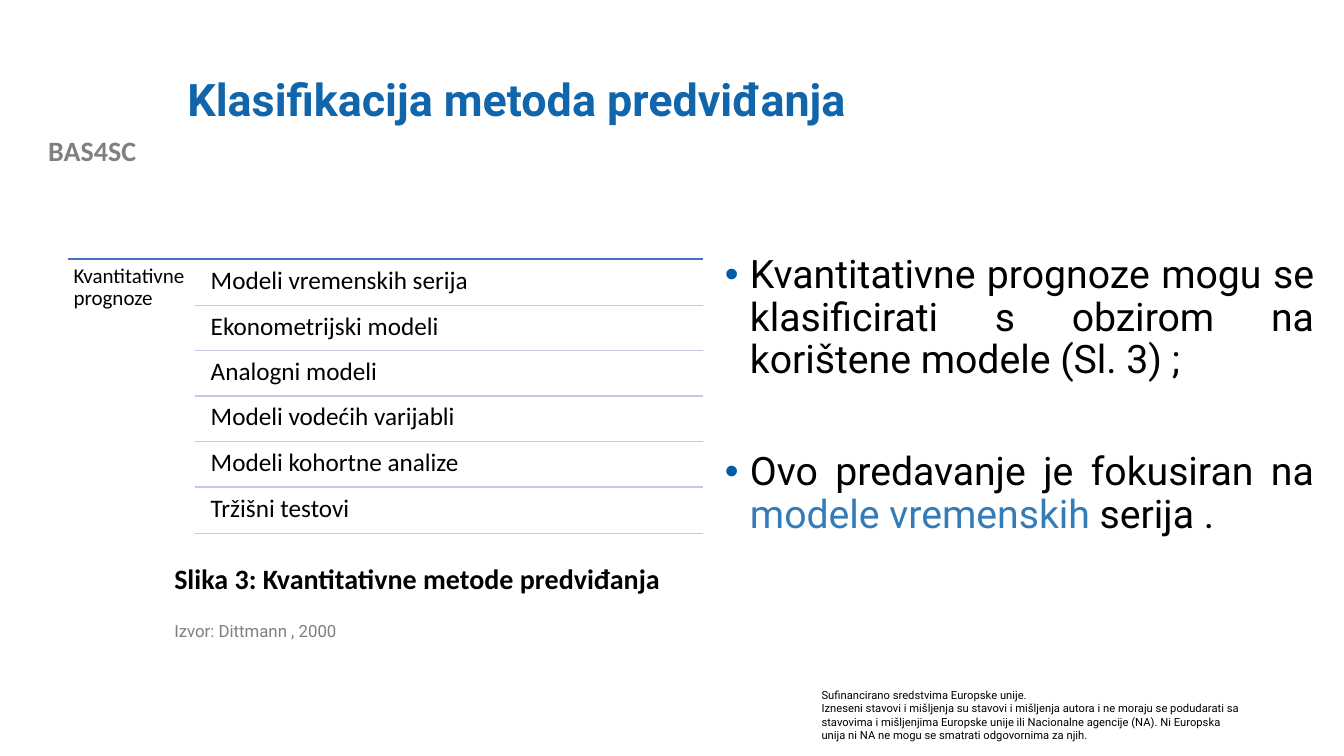
from pptx import Presentation, util as u
from pptx.dml.color import RGBColor
from pptx.enum import shapes, text
from pptx.oxml import parse_xml
from pptx.oxml.ns import nsdecls

HUE = {"title": "1065AB", "tag": "808080", "ink": "000000", "note": "7F7F7F",
       "dot": "015BA6", "key": "347CB8", "head": "4472C4", "rule": "C1C9E4"}
ROWS = ["Modeli vremenskih serija", "Ekonometrijski modeli", "Analogni modeli",
        "Modeli vodećih varijabli", "Modeli kohortne analize", "Tržišni testovi"]
POINTS = [[("Kvantitativne prognoze mogu se klasificirati s obzirom na korištene modele (Sl. 3) ;", "ink")],
          [("Ovo predavanje je fokusiran na ", "ink"), ("modele vremenskih ", "key"), ("serija .", "ink")]]
LEGAL = ["Sufinancirano sredstvima Europske unije.",
         "Izneseni stavovi i mišljenja su stavovi i mišljenja autora i ne moraju se podudarati sa "
         "stavovima i mišljenjima Europske unije ili Nacionalne agencije (NA). Ni Europska unija ni NA "
         "ne mogu se smatrati odgovornima za njih."]


def px(n):
    """Turn px into EMU, at 100 px to the inch."""
    return u.Emu(n * 9144)


def put(obj, **vals):
    """Set attributes from format values."""
    for name, val in vals.items():
        setattr(obj, name, val)


def write(para, words, size, hue="ink", face="Roboto", bold=False):
    """Add one run of styled text."""
    run = para.add_run()
    run.text = words
    put(run.font, size=u.Pt(size), name=face, bold=bold)
    run.font.color.rgb = RGBColor.from_string(HUE[hue])


def frame(slide, box, inset=None):
    """Place an empty wrapping text box and return its frame."""
    area = slide.shapes.add_textbox(*map(px, box)).text_frame
    area.word_wrap = True
    if inset is not None:
        sides = ("left", "top", "right", "bottom")
        put(area, **{f"margin_{side}": px(inset) for side in sides})
    return area


def label(slide, box, words, size, inset=None, form=None, **font):
    """Place a text box that holds one paragraph."""
    area = frame(slide, box, inset)
    para = area.paragraphs[0]
    write(para, words, size, **font)
    put(para, **(form or {}))
    return area


def rule(slide, left, right, top, hue):
    """Draw a level line."""
    line = slide.shapes.add_connector(shapes.MSO_CONNECTOR.STRAIGHT,
                                      px(left), px(top), px(right), px(top))
    line.line.width = u.Pt(1)
    line.line.color.rgb = RGBColor.from_string(HUE[hue])
    line._element.spPr.append(parse_xml(f"<a:effectLst {nsdecls('a')}/>"))


def header(slide, box):
    """Place the title and the project tag."""
    left, top, wide, high = box
    area = label(slide, (left + 176, top, wide - 176, high), "Klasifikacija metoda predviđanja",
                 32, form={"line_spacing": 0.9}, hue="title", bold=True)
    area.vertical_anchor = text.MSO_ANCHOR.MIDDLE
    label(slide, (left, top + 88, 183, 44), "BAS4SC", 20,
          form={"alignment": text.PP_ALIGN.CENTER}, hue="tag", face="Calibri", bold=True)


def scheme(slide, box):
    """Draw the ruled list of methods beside its heading."""
    left, top, wide, high = box
    right, inner, tall = left + wide, left + 126, 43
    tight = {"line_spacing": 0.9}
    rule(slide, left, right, top, "head")
    label(slide, (left, top, 126, high), "Kvantitativne prognoze", 15, 6, tight, face="Calibri")
    for i, words in enumerate(ROWS):
        base = top + 46 + 226 * i // 5
        label(slide, (inner + 9, base - tall - 1, right - inner - 9, tall), words, 18, 7, tight,
              face="Calibri")
        rule(slide, inner, right, base, "rule")


def caption(slide, box):
    """Place the figure caption and its source line."""
    left, top, wide, high = box
    label(slide, (left, top, wide, 44), "Slika 3: Kvantitativne metode predviđanja", 20,
          face="Calibri", bold=True)
    label(slide, (left, top + high - 28, wide, 28), "Izvor: Dittmann , 2000", 12,
          form={"line_spacing": 0.9}, hue="note")


def body(slide, box):
    """Place the bulleted points."""
    area = frame(slide, box)
    for i, parts in enumerate(POINTS):
        para = area.add_paragraph() if i else area.paragraphs[0]
        put(para, alignment=text.PP_ALIGN.JUSTIFY, line_spacing=0.9,
            space_before=u.Pt(50 if i else 0))
        props = para._p.get_or_add_pPr()
        props.set("marL", str(px(25)))
        props.set("indent", str(px(-25)))
        for tag in (f'<a:buClr {nsdecls("a")}><a:srgbClr val="{HUE["dot"]}"/></a:buClr>',
                    f'<a:buFont {nsdecls("a")} typeface="Arial"/>',
                    f'<a:buChar {nsdecls("a")} char="•"/>'):
            props.append(parse_xml(tag))
        for words, hue in parts:
            write(para, words, 28, hue)


def footer(slide, box):
    """Place the funding notice."""
    area = frame(slide, box)
    for i, words in enumerate(LEGAL):
        write(area.add_paragraph() if i else area.paragraphs[0], words, 8)


def main():
    """Build and save the slide."""
    deck = Presentation()
    put(deck, slide_width=px(1333), slide_height=px(750))
    slide = deck.slides.add_slide(deck.slide_layouts[6])
    header(slide, (0, 40, 1242, 122))
    scheme(slide, (67, 257, 630, 274))
    caption(slide, (163, 552, 545, 89))
    body(slide, (709, 248, 604, 365))
    footer(slide, (805, 678, 437, 64))
    deck.save("out.pptx")


if __name__ == "__main__":
    main()
